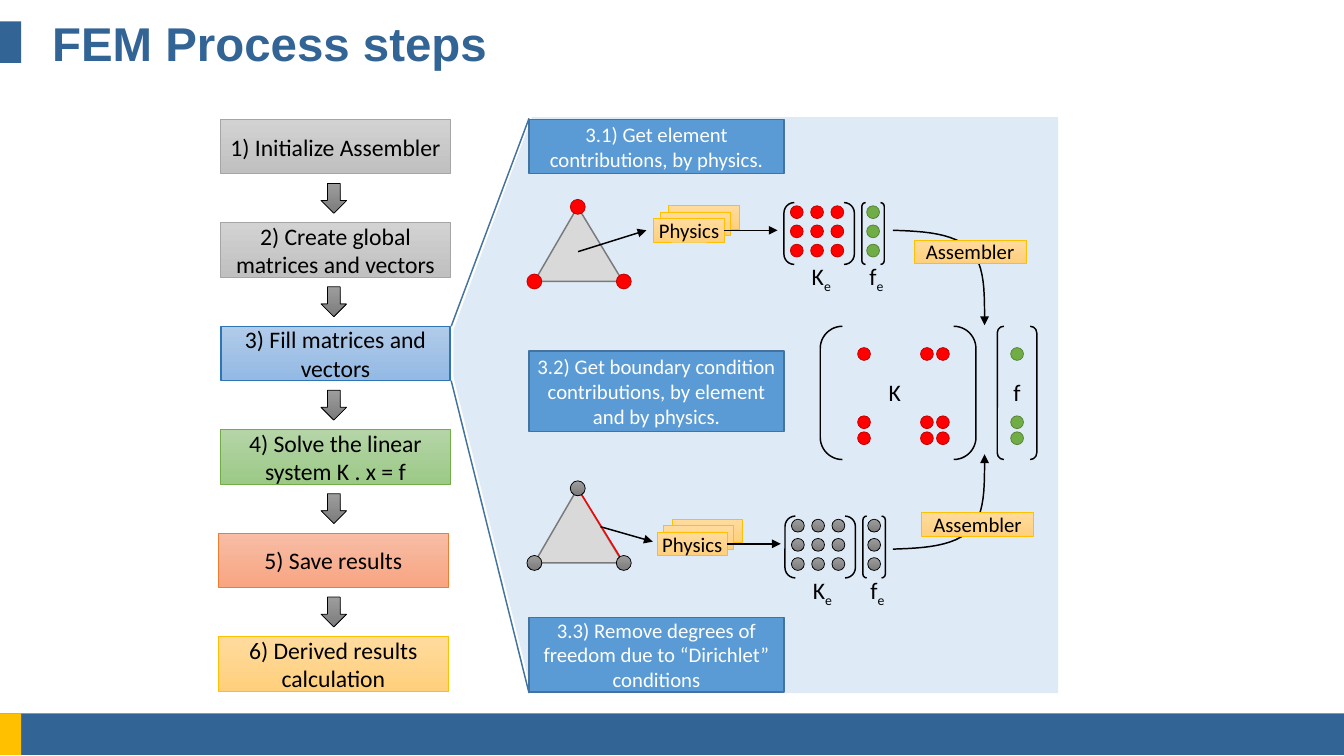
import dataclasses
import itertools
import pptx
import pptx.dml.color
import pptx.enum.shapes
import pptx.enum.text
import pptx.oxml.ns
import pptx.oxml.xmlchemy
import pptx.util

RGBColor = pptx.dml.color.RGBColor
SHAPE = pptx.enum.shapes.MSO_SHAPE
ALIGN = pptx.enum.text.PP_ALIGN
MIDDLE = pptx.enum.text.MSO_ANCHOR.MIDDLE
TOP = pptx.enum.text.MSO_ANCHOR.TOP

CELL = pptx.util.Inches(0.1)
COLUMNS, ROWS = 126, 70.9

BLACK = RGBColor(0, 0, 0)
WHITE = RGBColor(255, 255, 255)
NAVY = RGBColor(0x32, 0x64, 0x96)
GOLD = RGBColor(0xFF, 0xC0, 0x00)
PALE = RGBColor(0xDE, 0xEB, 0xF7)
EDGE = RGBColor(0x43, 0x73, 0x9E)
RED = RGBColor(0xFF, 0, 0)

BAR = (NAVY, None, 0)
ACCENT = (GOLD, None, 0)
PANEL = (PALE, None, 0)
OUTLINE = (None, BLACK, 1)
NOTE = (RGBColor(0x5B, 0x9B, 0xD5), EDGE, 1)
TRIANGLE = (RGBColor(0xD9, 0xD9, 0xD9), RGBColor(0x7A, 0x7A, 0x7A), 1)
RED_DOT = (RED, RGBColor(0xC0, 0, 0), 0.5)
GREEN_DOT = (RGBColor(0x70, 0xAD, 0x47), RGBColor(0x54, 0x82, 0x35), 0.5)
DARK = ((RGBColor(0x9D, 0x9D, 0x9D), RGBColor(0x7C, 0x7C, 0x7C)), BLACK, 0.5)
GRAY = ((RGBColor(0xD2, 0xD2, 0xD2), RGBColor(0xC0, 0xC0, 0xC0)), RGBColor(0xA5, 0xA5, 0xA5), 0.5)
BLUE = ((RGBColor(0xB1, 0xCB, 0xE9), RGBColor(0x93, 0xB9, 0xE4)), RGBColor(0x2E, 0x75, 0xB6), 1)
GREEN = ((RGBColor(0xB5, 0xD5, 0xA7), RGBColor(0x9C, 0xC9, 0x87)), RGBColor(0x70, 0xAD, 0x47), 0.5)
ORANGE = ((RGBColor(0xF7, 0xBD, 0xA5), RGBColor(0xF8, 0xA5, 0x82)), RGBColor(0xED, 0x7D, 0x31), 0.5)
YELLOW = ((RGBColor(0xFF, 0xDB, 0x9E), RGBColor(0xFF, 0xD0, 0x7C)), GOLD, 0.5)


@dataclasses.dataclass
class Box:
    left: float
    top: float
    width: float
    height: float

    def inner(self, x, y, width, height):
        return Box(self.left + x, self.top + y, width, height)

    def point(self, across, down):
        return self.left + across * self.width, self.top + down * self.height

    def emu(self):
        return [cells(v) for v in (self.left, self.top, self.width, self.height)]


def cells(value):
    return round(value * CELL)


def paint(shape, style):
    fill, edge, width = style
    shape.shadow.inherit = False
    if fill is None:
        shape.fill.background()
    elif isinstance(fill, RGBColor):
        shape.fill.solid()
        shape.fill.fore_color.rgb = fill
    else:
        shape.fill.gradient()
        shape.fill.gradient_angle = 270
        for stop, color in zip(shape.fill.gradient_stops, fill):
            stop.color.rgb = color
    if edge is None:
        shape.line.fill.background()
    else:
        shape.line.color.rgb = edge
        shape.line.width = pptx.util.Pt(width)


def add_figure(page, kind, box, style):
    shape = page.shapes.add_shape(kind, *box.emu())
    paint(shape, style)
    return shape


def write(shape, text, size, color=BLACK, name="Calibri", bold=False,
          align=ALIGN.CENTER, anchor=MIDDLE, insets=(0.4, 0.5), subscript=""):
    frame = shape.text_frame
    side, end = (cells(inset) for inset in insets)
    layout = {"word_wrap": True, "vertical_anchor": anchor, "margin_left": side,
              "margin_right": side, "margin_top": end, "margin_bottom": end}
    for key, value in layout.items():
        setattr(frame, key, value)
    para = frame.paragraphs[0]
    para.alignment = align
    for part in filter(None, (text, subscript)):
        span = para.add_run()
        span.text = part
        for key, value in {"size": pptx.util.Pt(size), "name": name, "bold": bold}.items():
            setattr(span.font, key, value)
        span.font.color.rgb = color
    if subscript:
        span._r.get_or_add_rPr().set("baseline", "-25000")


def add_label(page, box, text, subscript=""):
    label = page.shapes.add_textbox(*box.emu())
    write(label, text, 16, align=ALIGN.LEFT, anchor=TOP, insets=(0, 0), subscript=subscript)


def add_card(page, box, style, text, size, color=BLACK):
    card = add_figure(page, SHAPE.RECTANGLE, box, style)
    write(card, text, size, color)
    return card


def add_dot(page, center, size, style):
    x, y = center
    add_figure(page, SHAPE.OVAL, Box(x - size / 2, y - size / 2, size, size), style)


def add_arrowhead(shape):
    edge = shape._element.spPr.find(pptx.oxml.ns.qn("a:ln"))
    head = pptx.oxml.xmlchemy.OxmlElement("a:tailEnd")
    head.set("type", "triangle")
    edge.append(head)


def add_line(page, start, end, color=BLACK, arrow=False):
    kind = pptx.enum.shapes.MSO_CONNECTOR.STRAIGHT
    line = page.shapes.add_connector(kind, *(cells(v) for v in (*start, *end)))
    line.line.color.rgb = color
    line.line.width = pptx.util.Pt(1)
    if arrow:
        add_arrowhead(line)
    line._element.spPr.append(pptx.oxml.xmlchemy.OxmlElement("a:effectLst"))
    return line


def add_outline(page, points, style, close):
    corners = [(cells(x), cells(y)) for x, y in points]
    builder = page.shapes.build_freeform(*corners[0], scale=1.0)
    builder.add_line_segments(corners[1:], close=close)
    shape = builder.convert_to_shape()
    paint(shape, style)
    return shape


def bezier(knots, steps=12):
    for step in range(steps + 1):
        t = step / steps
        weights = ((1 - t) ** 3, 3 * t * (1 - t) ** 2, 3 * t * t * (1 - t), t ** 3)
        yield tuple(sum(w * knot[axis] for w, knot in zip(weights, knots)) for axis in (0, 1))


def draw_frame(page, box):
    foot = box.inner(0, 66.9, box.width, 3.9)
    add_figure(page, SHAPE.RECTANGLE, foot, BAR)
    add_figure(page, SHAPE.RECTANGLE, foot.inner(0, 0, 2, 3.9), ACCENT)
    add_figure(page, SHAPE.RECTANGLE, box.inner(0, 2, 2, 3.9), BAR)
    title = page.shapes.add_textbox(*box.inner(3.9, 2, 118.1, 3.9).emu())
    write(title, "FEM Process steps", 32, NAVY, "Arial", True, ALIGN.LEFT, insets=(1, 0.5))


def draw_steps(page, box):
    steps = [("1) Initialize Assembler", GRAY, 0.2),
             ("2) Create global matrices and vectors", GRAY, 0.2),
             ("3) Fill matrices and vectors", BLUE, 0.2),
             ("4) Solve the linear system K . x = f", GREEN, 0.2),
             ("5) Save results", ORANGE, 0),
             ("6) Derived results calculation", YELLOW, 0)]
    pitch = 9.7
    for index, (text, style, shift) in enumerate(steps):
        add_card(page, box.inner(shift, index * pitch, 21.5, 5.1), style, text, 16)
        if index:
            arrow = box.inner(9.6, index * pitch - 3.7, 2.4, 2.8)
            add_figure(page, SHAPE.DOWN_ARROW, arrow, DARK)


def draw_panel(page, box):
    corners = [(0, 0.37), (0.13, 0), (1, 0), (1, 1), (0.13, 1), (0, 0.45)]
    add_outline(page, [box.point(*corner) for corner in corners], PANEL, True)
    notes = [("3.1) Get element contributions, by physics.", 0.2, 5.1),
             ("3.2) Get boundary condition contributions, by element and by physics.", 21.9, 7.6),
             ("3.3) Remove degrees of freedom due to “Dirichlet” conditions", 46.9, 7)]
    for text, top, height in notes:
        add_card(page, box.inner(7.1, top, 23.9, height), NOTE, text, 14, WHITE)
    for start, end in ((19.6, 0.1), (24.7, 54)):
        add_line(page, (box.left - 0.2, box.top + start), (box.left + 7.1, box.top + end), EDGE)


def draw_element(page, box, dot_style, boundary=False):
    triangle = add_figure(page, SHAPE.ISOSCELES_TRIANGLE, box, TRIANGLE)
    triangle.adjustments[0] = 0.49
    left, apex, right = (box.point(*share) for share in ((0, 1), (0.49, 0), (1.01, 1)))
    if boundary:
        add_line(page, apex, right, RED)
    for corner in (left, apex, right):
        add_dot(page, corner, 1.4, dot_style)


def draw_physics(page, box):
    for x, y in ((1.4, -1.2), (0.6, -0.6)):
        add_figure(page, SHAPE.RECTANGLE, box.inner(x, y, box.width, box.height), YELLOW)
    front = add_card(page, box, YELLOW, "Physics", 14)
    x, y = box.point(1, 0.5)
    add_line(page, (x, y), (x + 5, y), arrow=True).begin_connect(front, 3)


def draw_system(page, box, columns, rows, vector, labels, styles, subscript=""):
    offset, width = vector
    side = box.inner(offset, 0, width, box.height)
    for bracket in (box, side):
        add_figure(page, SHAPE.DOUBLE_BRACKET, bracket, OUTLINE)
    for y, x in itertools.product(rows, columns):
        add_dot(page, (box.left + x, box.top + y), 1.2, styles[0])
    for y in rows:
        add_dot(page, (side.left + width / 2, box.top + y), 1.2, styles[1])
    for text, (x, y) in zip("Kf", labels):
        add_label(page, box.inner(x, y, 2.2, 2.7), text, subscript)


def draw_assembler(page, box, label, upward=False):
    knots = [(0, 0), (0.34, 0.01), (0.67, 0.03), (0.84, 0.2), (1.01, 0.36), (1, 0.67), (1, 1)]
    knots = [box.point(x, 1 - y if upward else y) for x, y in knots]
    points = [*bezier(knots[:4]), *list(bezier(knots[3:]))[1:]]
    add_arrowhead(add_outline(page, points, OUTLINE, False))
    add_card(page, box.inner(*label, 10.5, 2.2), YELLOW, "Assembler", 14)


def main():
    deck = pptx.Presentation()
    deck.slide_width, deck.slide_height = cells(COLUMNS), cells(ROWS)
    page = deck.slides.add_slide(deck.slide_layouts[6])
    draw_frame(page, Box(0, 0, COLUMNS, ROWS))
    draw_panel(page, Box(42.5, 11, 56.7, 54))
    draw_steps(page, Box(20.5, 11.2, 21.7, 53.6))
    draw_element(page, Box(50.1, 19.4, 8.3, 7), RED_DOT)
    draw_element(page, Box(50.1, 45.8, 8.3, 7), DARK, boundary=True)
    add_line(page, (54.2, 23.6), (60.6, 21.6), arrow=True)
    add_line(page, (56.3, 49.4), (61.2, 50.8), arrow=True)
    for left, top in ((61.3, 20.5), (61.6, 49.9)):
        draw_physics(page, Box(left, top, 6.6, 2.2))
    for left, top, styles in ((73.5, 19, (RED_DOT, GREEN_DOT)), (73.6, 48.4, (DARK, DARK))):
        draw_system(page, Box(left, top, 6.6, 5.8), (1.2, 3.1, 5), (0.9, 2.7, 4.5),
                    (7.3, 2.1), ((2.6, 5.6), (8, 5.6)), styles, "e")
    draw_system(page, Box(76.9, 30.6, 14.6, 12.5), (4.1, 10, 11.5), (2.6, 9, 10.5),
                (16.6, 3.7), ((6.4, 4.8), (18.1, 4.8)), (RED_DOT, GREEN_DOT))
    draw_assembler(page, Box(83.7, 21.6, 8.6, 8.9), (2, 0.9))
    draw_assembler(page, Box(83.7, 42.6, 8.6, 8.9), (2.7, 5.5), upward=True)
    deck.save("out.pptx")


if __name__ == "__main__":
    main()
